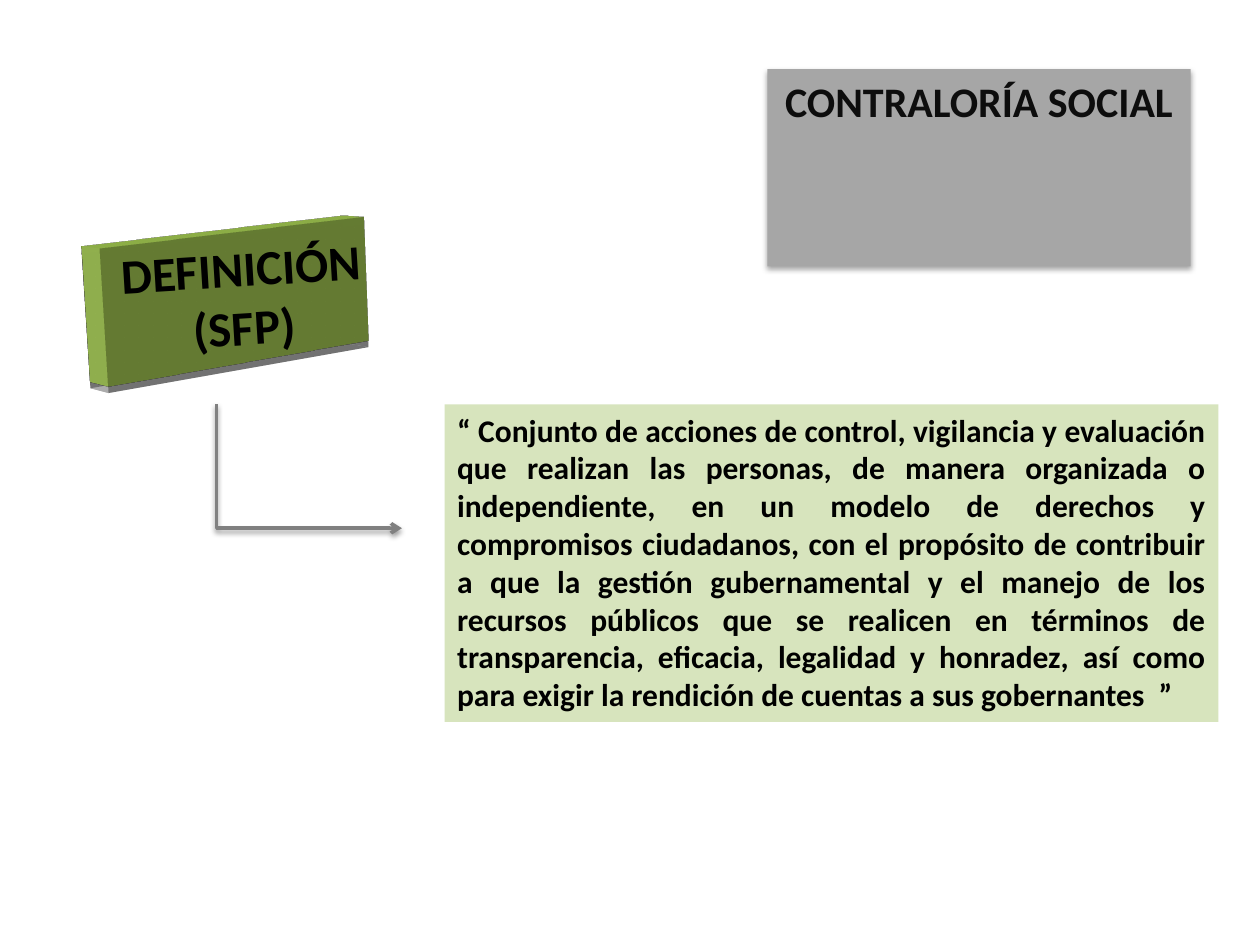
"""Build the slide that defines social auditing."""
from dataclasses import dataclass
from typing import Optional

from lxml import etree
from pptx import Presentation, util as u
from pptx.dml.color import RGBColor
from pptx.enum import shapes, text
from pptx.oxml import ns, parse_xml

WIDTH, HEIGHT = 10, 7.5
NAMESPACE = ns.nsdecls("a")
CAMERA = f"""<a:scene3d {NAMESPACE}>
  <a:camera prst="perspectiveFront" fov="3300000"><a:rot lat="486000" lon="19530000" rev="174000"/></a:camera>
  <a:lightRig rig="harsh" dir="t"><a:rot lat="0" lon="0" rev="3000000"/></a:lightRig>
</a:scene3d>"""
DEPTH = f"""<a:sp3d {NAMESPACE} extrusionH="254000" contourW="19050">
  <a:bevelT w="82550" h="44450" prst="angle"/><a:bevelB w="82550" h="44450" prst="angle"/>
  <a:contourClr><a:srgbClr val="FFFFFF"/></a:contourClr>
</a:sp3d>"""


@dataclass
class Shadow:
    """Soft black shadow: opacity in percent, lengths in points, angle in degrees."""
    opacity: int
    blur: float
    distance: float
    angle: int


@dataclass
class Panel:
    """Filled text panel placed by shares of the slide's size."""
    words: str
    left: float
    top: float
    width: float
    height: float
    fill: str
    size: int
    color: str = "000000"
    align: text.PP_ALIGN = text.PP_ALIGN.CENTER
    shadow: Optional[Shadow] = None
    solid: bool = False


TITLE = Panel("CONTRALORÍA SOCIAL", 0.609, 0.073, 0.336, 0.067, "A6A6A6", 24,
              "0D0D0D", shadow=Shadow(35, 3.1, 1.8, 90))
TERM = Panel("DEFINICIÓN (SFP)", 0.066, 0.245, 0.253, 0.139, "77933C", 28,
             shadow=Shadow(33, 17.8, 4, 87), solid=True)
DEFINITION = Panel(
    "“ Conjunto de acciones de control, vigilancia y evaluación que realizan las personas, "
    "de manera organizada o independiente, en un modelo de derechos y compromisos ciudadanos, "
    "con el propósito de contribuir a que la gestión gubernamental y el manejo de los recursos "
    "públicos que se realicen en términos de transparencia, eficacia, legalidad y honradez, "
    "así como para exigir la rendición de cuentas a sus gobernantes  ”",
    0.353, 0.428, 0.614, 0.336, "D7E4BD", 18, align=text.PP_ALIGN.JUSTIFY)


def across(share: float) -> int:
    """Return a share of the slide's width."""
    return u.Inches(share * WIDTH)


def down(share: float) -> int:
    """Return a share of the slide's height."""
    return u.Inches(share * HEIGHT)


def rgb(value: str) -> RGBColor:
    """Return the colour of a hex string."""
    return RGBColor.from_string(value)


def add_effects(properties, shadow: Optional[Shadow]) -> None:
    """Give shape properties an effect list, with a shadow if there is one."""
    effects = etree.SubElement(properties, ns.qn("a:effectLst"))
    if shadow:
        effects.append(parse_xml(
            f'<a:outerShdw {NAMESPACE} blurRad="{u.Pt(shadow.blur)}" dist="{u.Pt(shadow.distance)}" '
            f'dir="{shadow.angle * 60000}" algn="ctr" rotWithShape="0"><a:srgbClr val="000000">'
            f'<a:alpha val="{shadow.opacity * 1000}"/></a:srgbClr></a:outerShdw>'))


def format_panel(shape, panel: Panel) -> None:
    """Place, fill and letter a shape as its panel says."""
    shape.left, shape.top = across(panel.left), down(panel.top)
    shape.width, shape.height = across(panel.width), down(panel.height)
    shape.fill.solid()
    shape.fill.fore_color.rgb = rgb(panel.fill)
    shape.line.fill.background()
    properties = shape._element.spPr
    add_effects(properties, panel.shadow)
    if panel.solid:
        properties.append(parse_xml(CAMERA))
        properties.append(parse_xml(DEPTH))
    frame = shape.text_frame
    frame.word_wrap = True
    frame.auto_size = text.MSO_AUTO_SIZE.SHAPE_TO_FIT_TEXT
    frame.vertical_anchor = text.MSO_ANCHOR.TOP
    paragraph = frame.paragraphs[0]
    paragraph.alignment = panel.align
    run = paragraph.add_run()
    run.text = panel.words
    run.font.name, run.font.size, run.font.bold = "Calibri", u.Pt(panel.size), True
    run.font.color.rgb = rgb(panel.color)


def add_elbow(slide, left: float, top: float, right: float, bottom: float) -> None:
    """Draw an arrow that runs straight down, then right."""
    elbow = slide.shapes.add_connector(shapes.MSO_CONNECTOR.ELBOW, across(left), down(top),
                                       across(right), down(bottom))
    elbow.line.color.rgb = rgb("808080")
    elbow.line.width = u.Pt(2)
    properties = elbow._element.spPr
    guides = properties.find(ns.qn("a:prstGeom")).get_or_add_avLst()
    etree.SubElement(guides, ns.qn("a:gd"), name="adj1", fmla="val 0")
    etree.SubElement(elbow.line._get_or_add_ln(), ns.qn("a:tailEnd"), type="arrow")
    add_effects(properties, Shadow(38, 3.1, 1.6, 90))


def main() -> None:
    """Build and save the presentation."""
    presentation = Presentation()
    presentation.slide_width, presentation.slide_height = u.Inches(WIDTH), u.Inches(HEIGHT)
    slide = presentation.slides.add_slide(presentation.slide_layouts[5])
    format_panel(slide.shapes.title, TITLE)
    for panel in (TERM, DEFINITION):
        shape = slide.shapes.add_shape(shapes.MSO_SHAPE.RECTANGLE, 0, 0, 0, 0)
        format_panel(shape, panel)
    add_elbow(slide, 0.172, DEFINITION.top, 0.319, 0.559)
    presentation.save("out.pptx")


if __name__ == "__main__":
    main()
